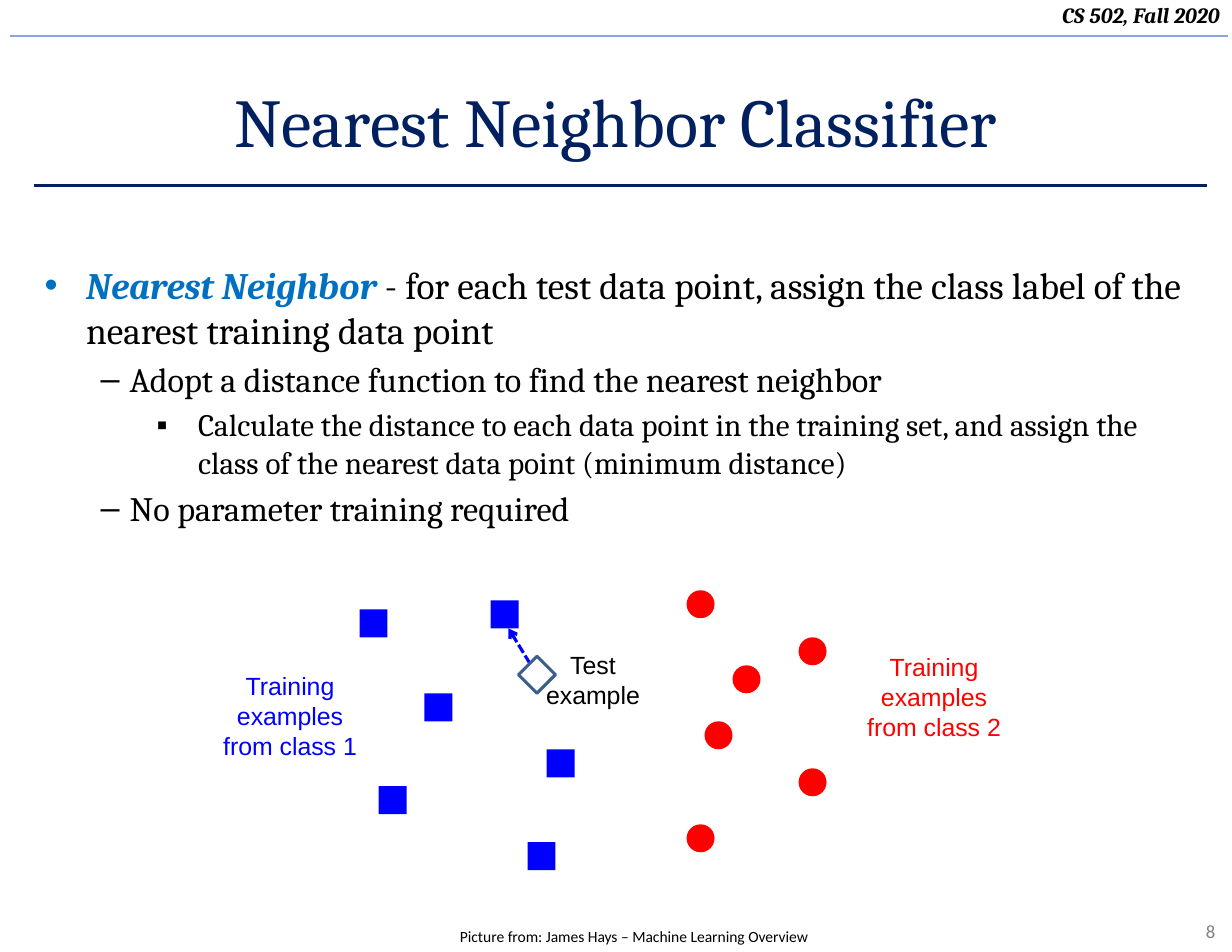
"""Build the Nearest Neighbor Classifier lecture slide."""
from lxml import etree
from pptx import Presentation
from pptx import util as u
from pptx.dml.color import RGBColor
from pptx.enum import dml, shapes, text
from pptx.oxml import ns

COLORS = {
    "black": "000000", "white": "FFFFFF", "navy": "002060", "accent": "0070C0",
    "class1": "0000FF", "class2": "FF0000", "rule": "8AA6DC",
    "outline": "3A5F8C", "gray": "808080",
}
CENTER, RIGHT = text.PP_ALIGN.CENTER, text.PP_ALIGN.RIGHT
MARKER = 0.25
CLASS1 = [(3.21, 5.44), (3.79, 6.19), (4.38, 5.36), (3.38, 7.02), (4.88, 6.69), (4.71, 7.52)]
CLASS2 = [(7.13, 5.69), (6.29, 6.44), (7.13, 6.86), (6.13, 5.27), (6.54, 5.94), (6.13, 7.36)]
LEVELS = [("•", 0.37, 0.37, 24), ("–", 0.76, 0.26, 22), ("▪", 1.37, 0.37, 20)]
POINTS = [
    (0, "- for each test data point, assign the class label of the nearest training data point"),
    (1, "Adopt a distance function to find the nearest neighbor"),
    (2, "Calculate the distance to each data point in the training set, "
        "and assign the class of the nearest data point (minimum distance)"),
    (1, "No parameter training required"),
]


def rgb(name):
    return RGBColor.from_string(COLORS[name])


def add_run(paragraph, words, size=16, font="Cambria", color="black", strong=False):
    run = paragraph.add_run()
    run.text = words
    run.font.name, run.font.size = font, u.Pt(size)
    run.font.bold = run.font.italic = strong
    run.font.color.rgb = rgb(color)


def add_child(parent, tag, **attributes):
    return etree.SubElement(parent, ns.qn(tag), attributes)


class SlideBuilder:
    def __init__(self, slide):
        self.slide = slide

    def frame(self, left, top, width, height, anchor=text.MSO_ANCHOR.TOP):
        box = self.slide.shapes.add_textbox(*map(u.Inches, (left, top, width, height)))
        box.text_frame.word_wrap = True
        box.text_frame.vertical_anchor = anchor
        return box.text_frame

    def label(self, words, *place, align=CENTER, anchor=text.MSO_ANCHOR.TOP, **style):
        paragraph = self.frame(*place, anchor=anchor).paragraphs[0]
        paragraph.alignment = align
        add_run(paragraph, words, **style)

    def bullets(self, points, lead, *place):
        body = self.frame(*place)
        for index, (level, words) in enumerate(points):
            symbol, margin, hanging, size = LEVELS[level]
            paragraph = body.add_paragraph() if index else body.paragraphs[0]
            paragraph.level = level
            if index:
                paragraph.space_before = u.Pt(size * 0.2)
            properties = paragraph._p.get_or_add_pPr()
            properties.set("marL", str(u.Inches(margin)))
            properties.set("indent", str(-u.Inches(hanging)))
            add_child(properties, "a:buFont", typeface="Arial")
            add_child(properties, "a:buChar", char=symbol)
            if not index:
                add_run(paragraph, lead, size=size, color="accent", strong=True)
            add_run(paragraph, words, size=size)

    def marker(self, kind, left, top, size, fill, outline=None):
        marker = self.slide.shapes.add_shape(kind, *map(u.Inches, (left, top, size, size)))
        marker.shadow.inherit = False
        marker.fill.solid()
        marker.fill.fore_color.rgb = rgb(fill)
        if outline:
            marker.line.color.rgb = rgb(outline)
            marker.line.width = u.Pt(2)
        else:
            marker.line.fill.background()

    def line(self, *ends, color, width=2, arrow=False):
        line = self.slide.shapes.add_connector(
            shapes.MSO_CONNECTOR.STRAIGHT, *map(u.Inches, ends))
        line.line.color.rgb = rgb(color)
        line.line.width = u.Pt(width)
        if arrow:
            line.line.dash_style = dml.MSO_LINE.SQUARE_DOT
            add_child(line.line._get_or_add_ln(), "a:tailEnd", type="arrow")
        add_child(line._element.spPr, "a:effectLst")


def main():
    deck = Presentation()
    deck.slide_width, deck.slide_height = u.Inches(11), u.Inches(8.5)
    page = SlideBuilder(deck.slides.add_slide(deck.slide_layouts[6]))
    shape = shapes.MSO_SHAPE

    page.label("8", 9.74, 8.16, 1.21, 0.3, align=RIGHT, size=12, font="Calibri", color="gray")
    page.label("CS 502, Fall 2020", 0, -0.03, 10.99, 0.34, align=RIGHT, size=14, strong=True)
    page.line(0.09, 0.32, 10.96, 0.32, color="rule", width=1.5)
    page.line(0.3, 1.66, 10.78, 1.66, color="navy")
    page.label("Nearest Neighbor Classifier", 0, 0.5, 11, 1.15,
               anchor=text.MSO_ANCHOR.MIDDLE, size=44, color="navy")
    page.bullets(POINTS, "Nearest Neighbor ", 0.3, 2.29, 10.48, 5.87)

    for kind, color, places in ((shape.RECTANGLE, "class1", CLASS1),
                                (shape.OVAL, "class2", CLASS2)):
        for left, top in places:
            page.marker(kind, left, top, MARKER, color)

    page.label("Test example", 4.71, 5.75, 1.17, 0.64, font="Arial")
    page.label("Training examples from class 1", 1.88, 5.94, 1.42, 0.91,
               font="Arial", color="class1")
    page.label("Training examples from class 2", 7.63, 5.77, 1.42, 0.91,
               font="Arial", color="class2")
    page.line(4.79, 6.02, 4.54, 5.61, color="class1", arrow=True)
    page.marker(shape.DIAMOND, 4.63, 5.86, 0.33, "white", outline="outline")
    page.label("Picture from: James Hays – Machine Learning Overview",
               1.88, 8.23, 7.56, 0.27, size=10, font="Calibri")
    deck.save("out.pptx")


if __name__ == "__main__":
    main()
